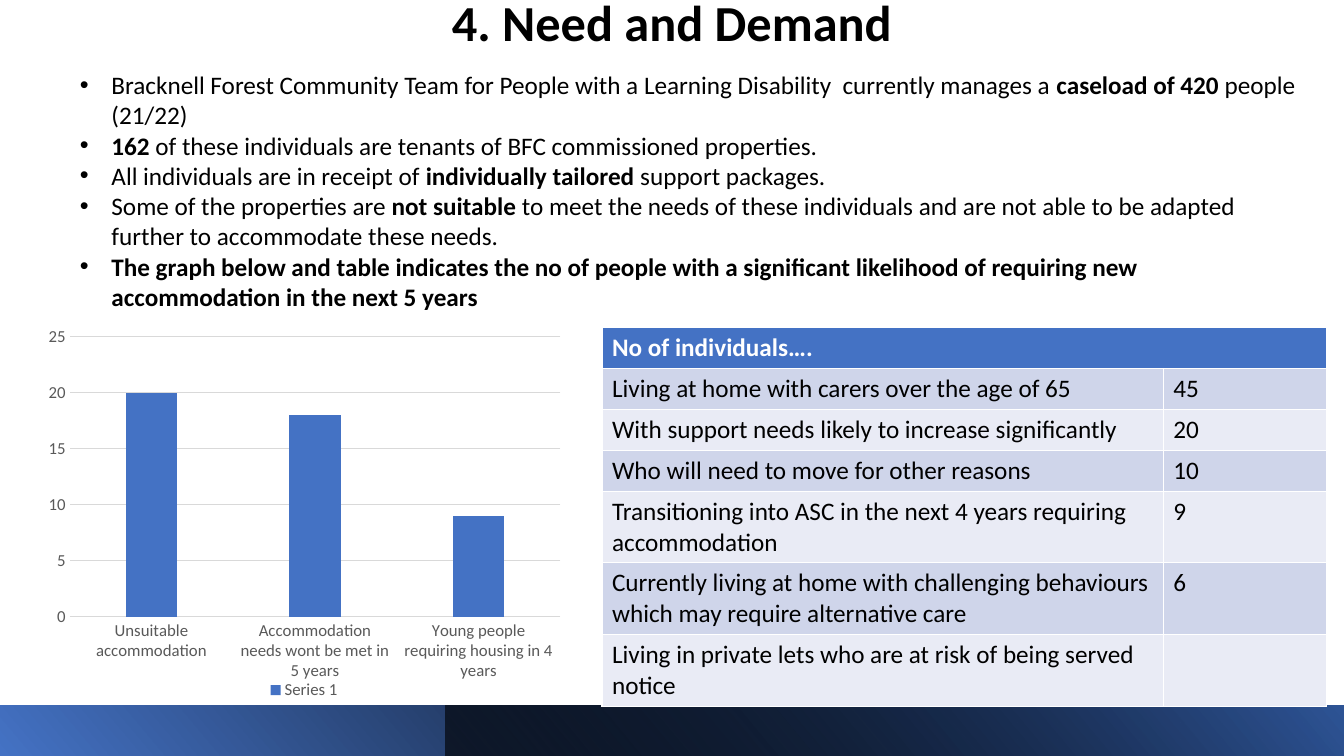
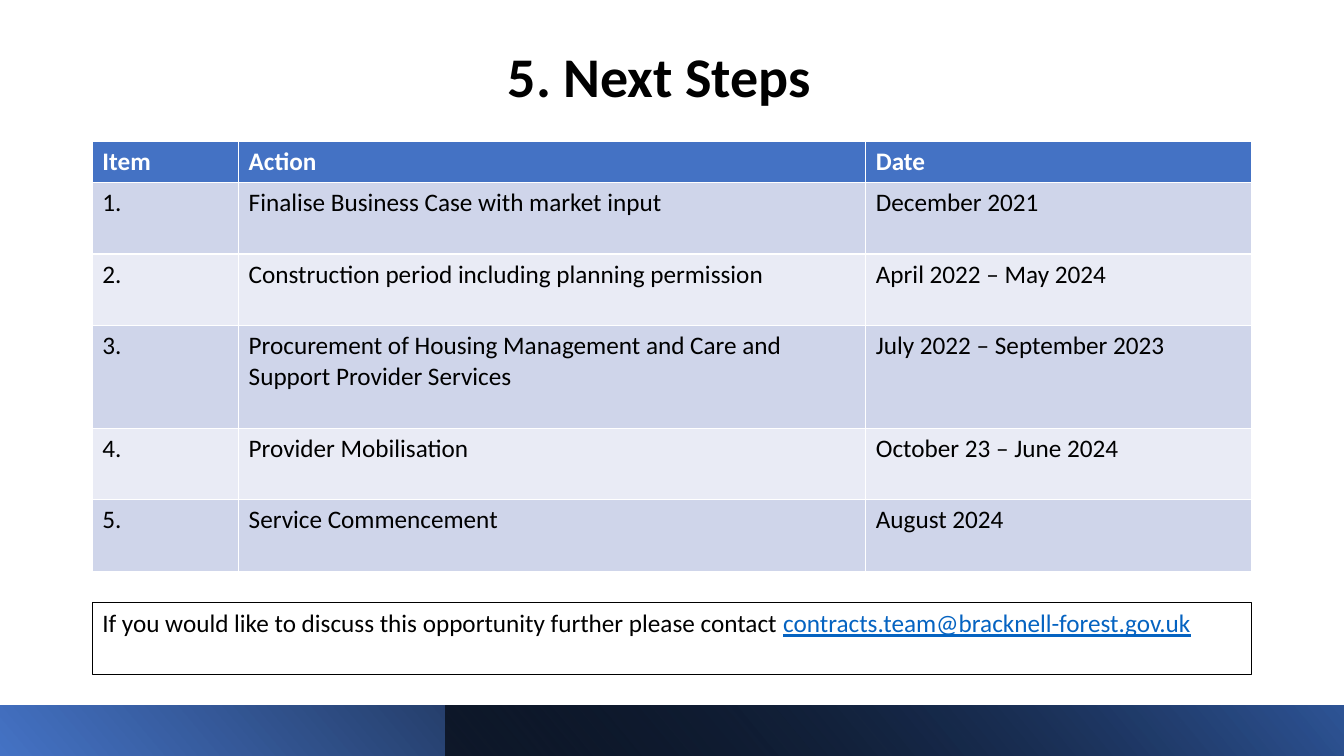
"""Builds two slides on housing need, demand and next steps."""
from lxml.etree import SubElement
from pptx import Presentation
from pptx.chart.data import CategoryChartData
from pptx.dml.color import RGBColor
from pptx.enum.chart import XL_CHART_TYPE, XL_LEGEND_POSITION, XL_TICK_MARK
from pptx.enum.shapes import MSO_SHAPE
from pptx.enum.text import MSO_ANCHOR, PP_ALIGN
from pptx.oxml import parse_xml
from pptx.oxml.ns import nsdecls, qn
from pptx.util import Pt

FONT = "Calibri"
BODY_SIZE = 18
CHART_SIZE = 12
BLACK = RGBColor(0x00, 0x00, 0x00)
WHITE = RGBColor(0xFF, 0xFF, 0xFF)
BLUE = RGBColor(0x44, 0x72, 0xC4)
DEEP_BLUE = RGBColor(0x2F, 0x55, 0x97)
LINK_BLUE = RGBColor(0x05, 0x63, 0xC1)
GREY_TEXT = RGBColor(0x59, 0x59, 0x59)
GREY_LINE = RGBColor(0xD9, 0xD9, 0xD9)
ROW_BANDS = (RGBColor(0xCF, 0xD5, 0xEA), RGBColor(0xE9, 0xEB, 0xF5))

SLIDE_WIDTH, SLIDE_HEIGHT = 960, 540
FOOTER_HEIGHT = 36
FOOTER_SPLIT = 318
BULLET_INDENT = 22.5
HEADER_ROW = 29.3
LINE_HEIGHT = 22

NEED_POINTS = [
    [("Bracknell Forest Community Team for People with a Learning Disability  currently manages a ", False),
     ("caseload of 420 ", True), ("people (21/22)", False)],
    [("162", True), (" of these individuals are tenants of BFC commissioned properties.", False)],
    [("All individuals are in receipt of ", False), ("individually tailored ", True),
     ("support packages.", False)],
    [("Some of the properties are ", False), ("not suitable ", True),
     ("to meet the needs of these individuals and are not able to be adapted further "
      "to accommodate these needs.", False)],
    [("The graph below and table indicates the no of people with a significant likelihood "
      "of requiring new accommodation in the next 5 years", True)],
]
DEMAND = {
    "Unsuitable accommodation": 20,
    "Accommodation needs wont be met in 5 years": 18,
    "Young people requiring housing in 4 years": 9,
}
INDIVIDUALS = [
    ("No of individuals….", ""),
    ("Living at home with carers over the age of 65", "45"),
    ("With support needs likely to increase significantly", "20"),
    ("Who will need to move for other reasons", "10"),
    ("Transitioning into ASC in the next 4 years requiring accommodation", "9"),
    ("Currently living at home with challenging behaviours which may require alternative care", "6"),
    ("Living in private lets who are at risk of being served notice", ""),
]
INDIVIDUALS_LINES = (1, 1, 1, 2, 2, 2)
STEPS = [
    ("Item", "Action", "Date"),
    ("1.", "Finalise Business Case with market input", "December 2021"),
    ("2.", "Construction period including planning permission", "April 2022 – May 2024"),
    ("3.", "Procurement of Housing Management and Care and Support Provider Services",
     "July 2022 – September 2023"),
    ("4.", "Provider Mobilisation", "October 23 – June 2024"),
    ("5.", "Service Commencement", "August 2024"),
]
STEPS_LINES = (2, 2, 3, 2, 2)
CONTACT = "If you would like to discuss this opportunity further please contact "
EMAIL = "contracts.team@bracknell-forest.gov.uk"


def style(font, size=BODY_SIZE, color=BLACK, bold=False):
    font.name, font.size, font.bold = FONT, Pt(size), bold
    font.color.rgb = color


def add_run(paragraph, text, **look):
    run = paragraph.add_run()
    run.text = text
    style(run.font, **look)
    return run


def add_footer_band(slide, left, stops):
    band = slide.shapes.add_shape(
        MSO_SHAPE.RECTANGLE, Pt(left), Pt(SLIDE_HEIGHT - FOOTER_HEIGHT),
        Pt(SLIDE_WIDTH - left), Pt(FOOTER_HEIGHT))
    band.shadow.inherit = False
    band.line.fill.background()
    band.fill.gradient()
    band.fill.gradient_angle = 40
    for stop, (position, color, opacity) in zip(band.fill.gradient_stops, stops):
        stop.position = position
        stop.color.rgb = color
        if opacity < 100:
            for tint in band.fill._xPr.iter(qn("a:srgbClr")):
                SubElement(tint, qn("a:alpha"), val=str(opacity * 1000))


def add_base(deck, title, center_x, center_y, size):
    slide = deck.slides.add_slide(deck.slide_layouts[6])
    width, height = 720, 50
    heading = slide.shapes.add_textbox(
        Pt(center_x - width / 2), Pt(center_y - height / 2), Pt(width), Pt(height))
    frame = heading.text_frame
    frame.word_wrap = True
    frame.vertical_anchor = MSO_ANCHOR.MIDDLE
    paragraph = frame.paragraphs[0]
    paragraph.alignment = PP_ALIGN.CENTER
    paragraph.line_spacing = 0.9
    add_run(paragraph, title, size=size, bold=True)
    add_footer_band(slide, 0, [(0, BLUE, 100), (0.78, BLACK, 100)])
    add_footer_band(slide, FOOTER_SPLIT, [(0, BLACK, 63), (1, DEEP_BLUE, 100)])
    return slide


def add_banded_table(slide, rows, left, top, widths, line_counts):
    heights = [HEADER_ROW] + [LINE_HEIGHT * count + 7.2 for count in line_counts]
    table = slide.shapes.add_table(
        len(rows), len(widths), Pt(left), Pt(top), Pt(sum(widths)), Pt(sum(heights))).table
    for column, width in zip(table.columns, widths):
        column.width = Pt(width)
    for index, (row, height, texts) in enumerate(zip(table.rows, heights, rows)):
        row.height = Pt(height)
        header = index == 0
        for cell, text in zip(row.cells, texts):
            cell.text = text
            cell.fill.solid()
            cell.fill.fore_color.rgb = BLUE if header else ROW_BANDS[(index - 1) % 2]
            style(cell.text_frame.paragraphs[0].font, color=WHITE if header else BLACK, bold=header)
            for run in cell.text_frame.paragraphs[0].runs:
                style(run.font, color=WHITE if header else BLACK, bold=header)
    return table


def add_need_points(slide):
    frame = slide.shapes.add_textbox(Pt(50), Pt(46), Pt(888), Pt(184)).text_frame
    frame.word_wrap = True
    for index, parts in enumerate(NEED_POINTS):
        paragraph = frame.add_paragraph() if index else frame.paragraphs[0]
        for text, bold in parts:
            add_run(paragraph, text, bold=bold)
        properties = paragraph._p.get_or_add_pPr()
        properties.set("marL", str(Pt(BULLET_INDENT)))
        properties.set("indent", str(-Pt(BULLET_INDENT)))
        SubElement(properties, qn("a:buFont"), typeface="Arial")
        SubElement(properties, qn("a:buChar"), char="•")


def add_demand_chart(slide):
    demand = CategoryChartData()
    demand.categories = list(DEMAND)
    demand.add_series("Series 1", list(DEMAND.values()))
    chart = slide.shapes.add_chart(
        XL_CHART_TYPE.COLUMN_CLUSTERED, Pt(22.5), Pt(232.5), Pt(389.5), Pt(270.5), demand).chart
    chart.has_title = False
    style(chart.font, CHART_SIZE, GREY_TEXT)
    chart.has_legend = True
    chart.legend.position = XL_LEGEND_POSITION.BOTTOM
    chart.legend.include_in_layout = False
    style(chart.legend.font, CHART_SIZE, GREY_TEXT)

    plot = chart.plots[0]
    plot.vary_by_categories = False
    plot.gap_width, plot.overlap = 219, -27
    columns = plot.series[0].format.fill
    columns.solid()
    columns.fore_color.rgb = BLUE

    for axis in (chart.category_axis, chart.value_axis):
        axis.major_tick_mark = axis.minor_tick_mark = XL_TICK_MARK.NONE
        style(axis.tick_labels.font, CHART_SIZE, GREY_TEXT)
    values = chart.value_axis
    values.minimum_scale, values.maximum_scale, values.major_unit = 0, 25, 5
    values.format.line.fill.background()
    values.has_major_gridlines = True
    for line in (chart.category_axis.format.line, values.major_gridlines.format.line):
        line.color.rgb = GREY_LINE
        line.width = Pt(0.75)

    area = chart._chartSpace.chart.plotArea
    for old in area.findall(qn("c:layout")):
        area.remove(old)
    sizes = {"x": 0.07, "y": 0.03, "w": 0.9, "h": 0.74}
    area.insert(0, parse_xml(
        f'<c:layout {nsdecls("c")}><c:manualLayout><c:layoutTarget val="inner"/>'
        '<c:xMode val="edge"/><c:yMode val="edge"/>'
        + "".join(f'<c:{key} val="{size}"/>' for key, size in sizes.items())
        + "</c:manualLayout></c:layout>"))


def add_contact(slide):
    contact = slide.shapes.add_shape(MSO_SHAPE.RECTANGLE, Pt(66), Pt(430.5), Pt(828), Pt(51))
    contact.shadow.inherit = False
    contact.fill.background()
    contact.line.color.rgb = BLACK
    contact.line.width = Pt(0.75)
    frame = contact.text_frame
    frame.word_wrap = True
    frame.vertical_anchor = MSO_ANCHOR.TOP
    paragraph = frame.paragraphs[0]
    paragraph.alignment = PP_ALIGN.LEFT
    add_run(paragraph, CONTACT)
    add_run(paragraph, EMAIL, color=LINK_BLUE).font.underline = True


def main():
    deck = Presentation()
    deck.slide_width, deck.slide_height = Pt(SLIDE_WIDTH), Pt(SLIDE_HEIGHT)

    need = add_base(deck, "4. Need and Demand", 480, 18, 36)
    add_need_points(need)
    add_demand_chart(need)
    individuals = add_banded_table(need, INDIVIDUALS, 430, 234, (401, 116.5), INDIVIDUALS_LINES)
    individuals.cell(0, 0).merge(individuals.cell(0, 1))

    steps = add_base(deck, "5. Next Steps", 471, 57, 40)
    add_banded_table(steps, STEPS, 66, 101, (104.5, 448, 275.5), STEPS_LINES)
    add_contact(steps)

    deck.save("out.pptx")


if __name__ == "__main__":
    main()
